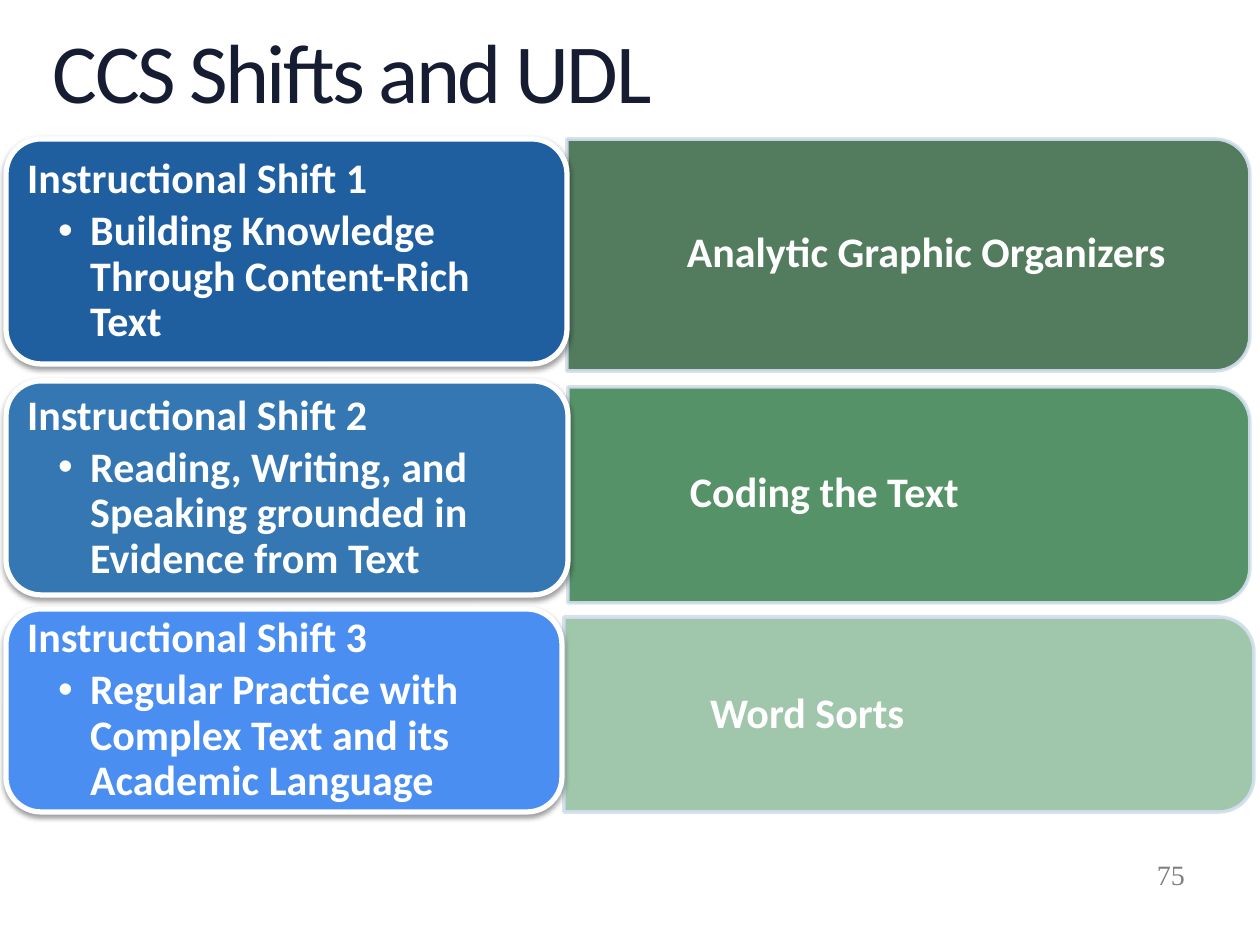
from math import cos, pi, sin

from lxml.etree import SubElement
from pptx import Presentation
from pptx.dml.color import RGBColor
from pptx.enum.shapes import MSO_SHAPE
from pptx.enum.text import MSO_ANCHOR, MSO_AUTO_SIZE, PP_ALIGN
from pptx.oxml.ns import qn
from pptx.util import Pt

WHITE = "FFFFFF"
EDGE = "D3DFEE"
CURVE = 35

# head, point, card colour, card box, label, label box, panel colour, opacity, panel box
ROWS = [
    ("Instructional Shift 1", "Building Knowledge Through Content-Rich Text",
     "1F5FA0", (6, 139, 561, 225), "Analytic Graphic Organizers",
     (674, 225, 509, 58), "416E4E", 90, (567, 139, 683, 232)),
    ("Instructional Shift 2",
     "Reading, Writing, and Speaking grounded in Evidence from Text",
     "3477B2", (6, 381, 562, 214), "Coding the Text",
     (677, 465, 509, 58), "569268", 100, (568, 387, 682, 216)),
    ("Instructional Shift 3",
     "Regular Practice with Complex Text and its Academic Language",
     "4A8EF2", (6, 609, 556, 203), "Word Sorts",
     (697, 686, 231, 58), "96C1A3", 90, (564, 617, 690, 195)),
]


def px(n):
    return round(n * 914400 / 126)


def hue(code):
    return RGBColor.from_string(code)


def write(para, text, size=24, font="Calibri", color=WHITE, bold=True,
          space=0.9, after=0, left=0, hang=0, bullet=None, track=0):
    props = para._p.get_or_add_pPr()
    props.set("marL", str(px(left)))
    props.set("indent", str(px(-hang)))
    if bullet:
        SubElement(props, qn("a:buFont")).set("typeface", "Arial")
        SubElement(props, qn("a:buChar")).set("char", bullet)
    para.alignment = PP_ALIGN.LEFT
    para.line_spacing = space
    para.space_after = Pt(after)
    run = para.add_run()
    run.text = text
    face = run.font
    face.size, face.name, face.bold = Pt(size), font, bold
    face.color.rgb = hue(color)
    if track:
        run._r.get_or_add_rPr().set("spc", str(track))


def setup(frame, x, y, anchor=MSO_ANCHOR.MIDDLE):
    """Wrap the text, with x and y as inner margins."""
    frame.word_wrap = True
    frame.auto_size = MSO_AUTO_SIZE.NONE
    frame.vertical_anchor = anchor
    frame.margin_left = frame.margin_right = px(x)
    frame.margin_top = frame.margin_bottom = px(y)


def paint(shape, fill, line, width):
    shape.shadow.inherit = False
    shape.fill.solid()
    shape.fill.fore_color.rgb = hue(fill)
    shape.line.color.rgb = hue(line)
    shape.line.width = Pt(width)


def fade(part, pct):
    """Set the opacity of every colour in a fill or line element."""
    for tint in part.iter(qn("a:srgbClr")):
        SubElement(tint, qn("a:alpha")).set("val", str(pct * 1000))


def cast(shape):
    """Give the shape a soft shadow straight below it."""
    effects = shape._element.spPr.find(qn("a:effectLst"))
    shade = SubElement(effects, qn("a:outerShdw"), blurRad=str(Pt(3.1)),
                       dist=str(Pt(1.6)), dir="5400000", rotWithShape="0")
    SubElement(shade, qn("a:srgbClr"), val="000000")
    fade(shade, 38)


def panel(slide, box, color, pct):
    """Draw a panel that is rounded on its right side only."""
    x, y, w, h = box
    turns = [step * pi / 20 for step in range(11)]
    mid = x + w - CURVE
    top = [(mid + CURVE * sin(t), y + CURVE - CURVE * cos(t)) for t in turns]
    low = [(a, 2 * y + h - b) for a, b in reversed(top)]
    points = [(px(a), px(b)) for a, b in top + low + [(x, y + h)]]
    path = slide.shapes.build_freeform(px(x), px(y))
    path.add_line_segments(points, close=True)
    shape = path.convert_to_shape()
    paint(shape, color, EDGE, 2)
    props = shape._element.spPr
    fade(props.find(qn("a:solidFill")), pct)
    fade(props.find(qn("a:ln")), 90)


def card(slide, box, color, head, point):
    shape = slide.shapes.add_shape(MSO_SHAPE.ROUNDED_RECTANGLE, *map(px, box))
    shape.adjustments[0] = CURVE / box[3]
    paint(shape, color, WHITE, 3)
    cast(shape)
    frame = shape.text_frame
    setup(frame, 11, 5)
    write(frame.paragraphs[0], head, after=4, left=32, hang=32)
    write(frame.add_paragraph(), point, after=4, left=63, hang=32, bullet="•")


def label(slide, box, text, **style):
    frame = slide.shapes.add_textbox(*map(px, box)).text_frame
    setup(frame, 13, 6)
    write(frame.paragraphs[0], text, **style)


def title(slide, box, text):
    shape = slide.shapes.title
    shape.left, shape.top, shape.width, shape.height = map(px, box)
    setup(shape.text_frame, 0, 0, MSO_ANCHOR.TOP)
    write(shape.text_frame.paragraphs[0], text, size=48, color="161D32",
          bold=False, track=-150)


def main():
    deck = Presentation()
    deck.slide_width, deck.slide_height = px(1260), px(945)
    slide = deck.slides.add_slide(deck.slide_layouts[5])
    title(slide, (53, 31, 1155, 92), "CCS Shifts and UDL")
    for head, point, blue, left, text, spot, green, pct, right in ROWS:
        panel(slide, right, green, pct)
        card(slide, left, blue, head, point)
        label(slide, spot, text)
    label(slide, (1144, 849, 66, 50), "75", size=16, font="Times New Roman",
          color="808080", bold=False, space=1.0)
    deck.save("out.pptx")


if __name__ == "__main__":
    main()
